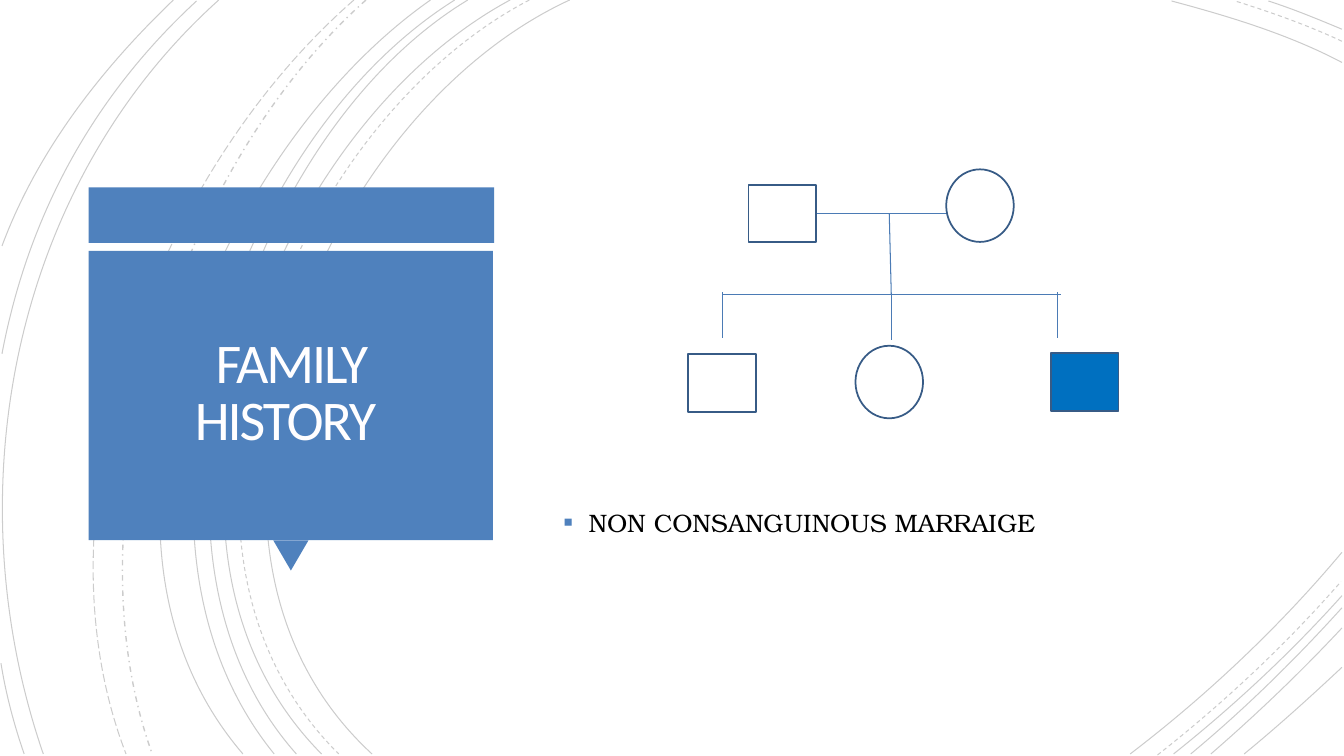
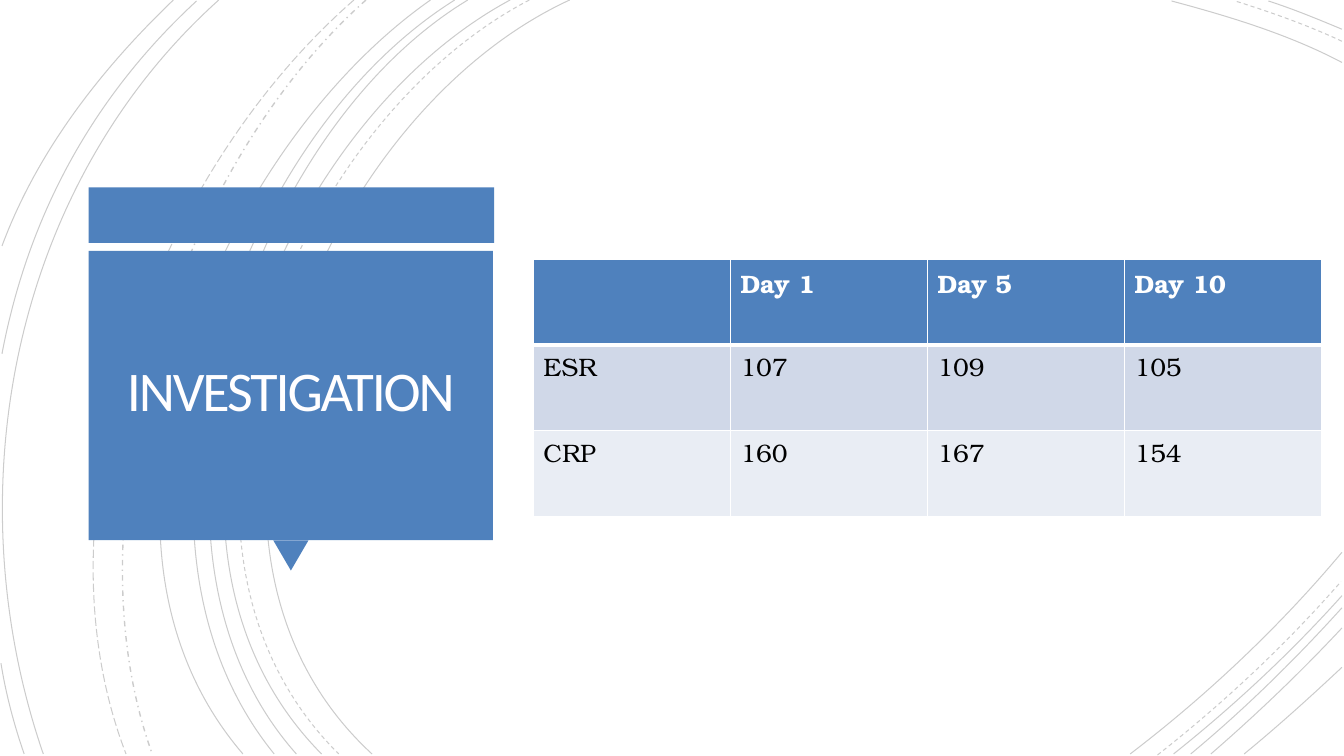
from lxml import etree
from pptx import Presentation
from pptx.dml.color import RGBColor
from pptx.enum import dml, shapes, text
from pptx.oxml.ns import qn
from pptx.util import Inches, Pt

BLUE, WHITE, BLACK = "4F81BD", "FFFFFF", "000000"
EDGE, LINK, MARK = "375B86", "4B7BB5", "0070C0"
BODY, HEAD = "TeX Gyre Bonum", "Calibri"
DASH, SHAPE = dml.MSO_LINE, shapes.MSO_SHAPE

# Each curve: start, two control points, end
SOLID = [
    (5.65, 0, 3.15, 1.15, 1.43, 5.4, 3.69, 7.48),
    (13.31, 0.62, 12.78, 0.34, 12.18, 0.16, 11.62, 0.01),
    (11.21, 7.48, 11.97, 6.9, 12.69, 6.22, 13.31, 5.48),
    (5.06, 0, 2.7, 1.27, 1.1, 5.37, 3.19, 7.48),
    (13.31, 0.29, 13.07, 0.19, 12.83, 0.09, 12.58, 0.01),
    (11.64, 7.48, 12.23, 7.01, 12.8, 6.48, 13.31, 5.91),
    (4.64, 0, 2.44, 1.33, 1.1, 5.41, 2.94, 7.48),
    (11.81, 7.48, 12.34, 7.04, 12.84, 6.55, 13.31, 6.03),
    (4.51, 0, 2.31, 1.38, 0.97, 5.33, 2.72, 7.48),
    (12.01, 7.48, 12.46, 7.09, 12.9, 6.67, 13.31, 6.23),
    (4.27, 0, 2.17, 1.47, 0.53, 5.29, 2.41, 7.48),
    (12.34, 7.48, 12.67, 7.21, 12.99, 6.92, 13.31, 6.62),
    (2.17, 0, 0.11, 1.85, -0.46, 4.9, 0.43, 7.48),
    (1.95, 0.01, 0.92, 0.96, 0.28, 2.14, 0.02, 3.51),
    (0.01, 6.58, 0.06, 6.89, 0.14, 7.19, 0.24, 7.48),
    (1.72, 0, 1, 0.69, 0.37, 1.5, 0.02, 2.44),
]
DASHED = [
    (5.25, 0, 2.85, 1.25, 1.23, 5.37, 3.36, 7.48),
    (13.31, 0.41, 12.97, 0.25, 12.6, 0.12, 12.25, 0.01),
    (11.48, 7.49, 12.13, 6.98, 12.75, 6.4, 13.3, 5.77),
]
DOTTED = [(3.63, 0, 1.76, 1.66, 0.65, 5.09, 1.51, 7.48)]
LONG = [(3.51, 0, 1.57, 1.69, 0.29, 4.99, 1.25, 7.48)]
CURVES = [
    (SOLID, DASH.SOLID, 0.75),
    (DASHED, DASH.DASH, 0.75),
    (DOTTED, DASH.DASH_DOT, 1),
    (LONG, DASH.LONG_DASH, 0.75),
]


def rgb(code):
    return RGBColor.from_string(code)


def box(*sides):
    return [Inches(side) for side in sides]


class Deck:
    def __init__(self):
        self.prs = Presentation()
        self.prs.slide_width, self.prs.slide_height = box(13.33, 7.5)
        self.slide = None

    def page(self, title):
        """New slide with the shared curves and title panel."""
        self.slide = self.prs.slides.add_slide(self.prs.slide_layouts[6])
        for group, dash, width in CURVES:
            for curve in group:
                self.curve(curve, dash, width)
        self.shape(SHAPE.RECTANGLE, 0.88, 1.86, 4.02, 0.55, BLUE)
        tip = self.shape(SHAPE.ISOSCELES_TRIANGLE, 2.71, 5.36, 0.35, 0.3, BLUE)
        tip.rotation = 180
        self.shape(SHAPE.RECTANGLE, 0.88, 2.49, 4.01, 2.87, BLUE)
        par = self.text(title, 0.97, 2.57, 3.83, 2.69, 40, HEAD, "FFFEFF", 0.25)
        par.alignment = text.PP_ALIGN.CENTER
        par.line_spacing = 0.85
        par.runs[0].font._element.set("spc", "-150")

    def curve(self, curve, dash, width):
        first, *rest = zip(box(*curve[::2]), box(*curve[1::2]))
        pen = self.slide.shapes.build_freeform(*first)
        pen.add_line_segments(rest, close=False)
        arc = pen.convert_to_shape()
        arc.shadow.inherit = False
        arc.fill.background()
        arc.line.color.rgb = rgb(BLACK)
        arc.line.width = Pt(width)
        arc.line.dash_style = dash
        props = arc._element.spPr
        tint = props.find(".//" + qn("a:srgbClr"))
        etree.SubElement(tint, qn("a:alpha"), val="20000")
        # Turn the three segments into one cubic curve
        steps = props.findall(".//" + qn("a:lnTo"))
        bend = etree.SubElement(steps[0].getparent(), qn("a:cubicBezTo"))
        for step in steps:
            bend.append(step[0])
            step.getparent().remove(step)

    def shape(self, kind, x, y, w, h, fill=None, edge=None):
        item = self.slide.shapes.add_shape(kind, *box(x, y, w, h))
        item.shadow.inherit = False
        if fill:
            item.fill.solid()
            item.fill.fore_color.rgb = rgb(fill)
        else:
            item.fill.background()
        if edge:
            item.line.color.rgb = rgb(edge)
            item.line.width = Pt(1.25)
        else:
            item.line.fill.background()
        return item

    def person(self, kind, x, y, fill=None):
        """Family member centred on x, y."""
        w, h = 0.67, 0.72 if kind == SHAPE.OVAL else 0.57
        self.shape(kind, x - w / 2, y - h / 2, w, h, fill, EDGE)

    def link(self, *ends):
        line = self.slide.shapes.add_connector(shapes.MSO_CONNECTOR.STRAIGHT, *box(*ends))
        line.line.color.rgb = rgb(LINK)
        line.line.width = Pt(0.75)
        etree.SubElement(line._element.spPr, qn("a:effectLst"))

    def style(self, par, size, face, tint, bold=False):
        for run in par.runs:
            font = run.font
            font.size, font.name, font.bold = Pt(size), face, bold
            font.color.rgb = rgb(tint)

    def text(self, words, x, y, w, h, size, face, tint, pad):
        frame = self.slide.shapes.add_textbox(*box(x, y, w, h)).text_frame
        frame.word_wrap = True
        frame.vertical_anchor = text.MSO_ANCHOR.MIDDLE
        frame.margin_left = frame.margin_right = Inches(pad)
        frame.margin_top = frame.margin_bottom = Inches(pad)
        frame.text = words
        par = frame.paragraphs[0]
        self.style(par, size, face, tint)
        return par

    def bullet(self, words, x, y, w, h):
        par = self.text(words, x, y, w, h, 18, BODY, BLACK, 0.1)
        par.line_spacing = 1.2
        props = par._p.get_or_add_pPr()
        props.set("marL", str(Inches(0.25)))
        props.set("indent", str(Inches(-0.25)))
        tint = etree.SubElement(props, qn("a:buClr"))
        etree.SubElement(tint, qn("a:srgbClr"), val=BLUE)
        etree.SubElement(props, qn("a:buSzPct"), val="110000")
        etree.SubElement(props, qn("a:buFont"), typeface=HEAD)
        etree.SubElement(props, qn("a:buChar"), char="▪")

    def rule(self, cell, side, width):
        edge = etree.SubElement(cell._tc.get_or_add_tcPr(), qn("a:ln" + side), w=str(Pt(width)))
        fill = etree.SubElement(edge, qn("a:solidFill"))
        etree.SubElement(fill, qn("a:srgbClr"), val=WHITE)

    def table(self, rows, x, y, w, h):
        grid = self.slide.shapes.add_table(len(rows), len(rows[0]), *box(x, y, w, h)).table
        fills = (BLUE, "D0D8E8", "E9EDF4")
        for r, row in enumerate(rows):
            for c, words in enumerate(row):
                cell = grid.cell(r, c)
                thick = {"B": 3} if r == 0 else {"T": 3} if r == 1 else {}
                for side in "LRTB":
                    self.rule(cell, side, thick.get(side, 1))
                cell.fill.solid()
                cell.fill.fore_color.rgb = rgb(fills[r])
                cell.text_frame.text = words
                self.style(cell.text_frame.paragraphs[0], 18, BODY,
                           BLACK if r else WHITE, r == 0)


def main():
    deck = Deck()

    # Family tree
    deck.page("FAMILY HISTORY ")
    man, woman = SHAPE.RECTANGLE, SHAPE.OVAL
    deck.person(woman, 9.72, 2.04)
    deck.person(man, 7.76, 2.12)
    kids = ((man, 7.16, 3.8, None), (woman, 8.82, 3.79, None), (man, 10.76, 3.79, MARK))
    for kid in kids:
        deck.person(*kid)
    deck.link(7.17, 2.92, 10.52, 2.92)
    deck.link(8.1, 2.12, 9.38, 2.12)
    deck.link(8.82, 2.12, 8.84, 2.92)
    for x, top in ((7.17, 2.9), (8.84, 2.92), (10.49, 2.9)):
        deck.link(x, top, x, top + 0.45)
    deck.bullet("NON CONSANGUINOUS MARRAIGE", 5.49, 4.85, 6.87, 0.6)

    # Test results
    deck.page("INVESTIGATION")
    deck.table([
        ("", "Day 1", "Day 5", "Day 10"),
        ("ESR", "107", "109", "105"),
        ("CRP", "160", "167", "154"),
    ], 5.29, 2.57, 7.82, 2.55)

    deck.prs.save("out.pptx")


if __name__ == "__main__":
    main()
